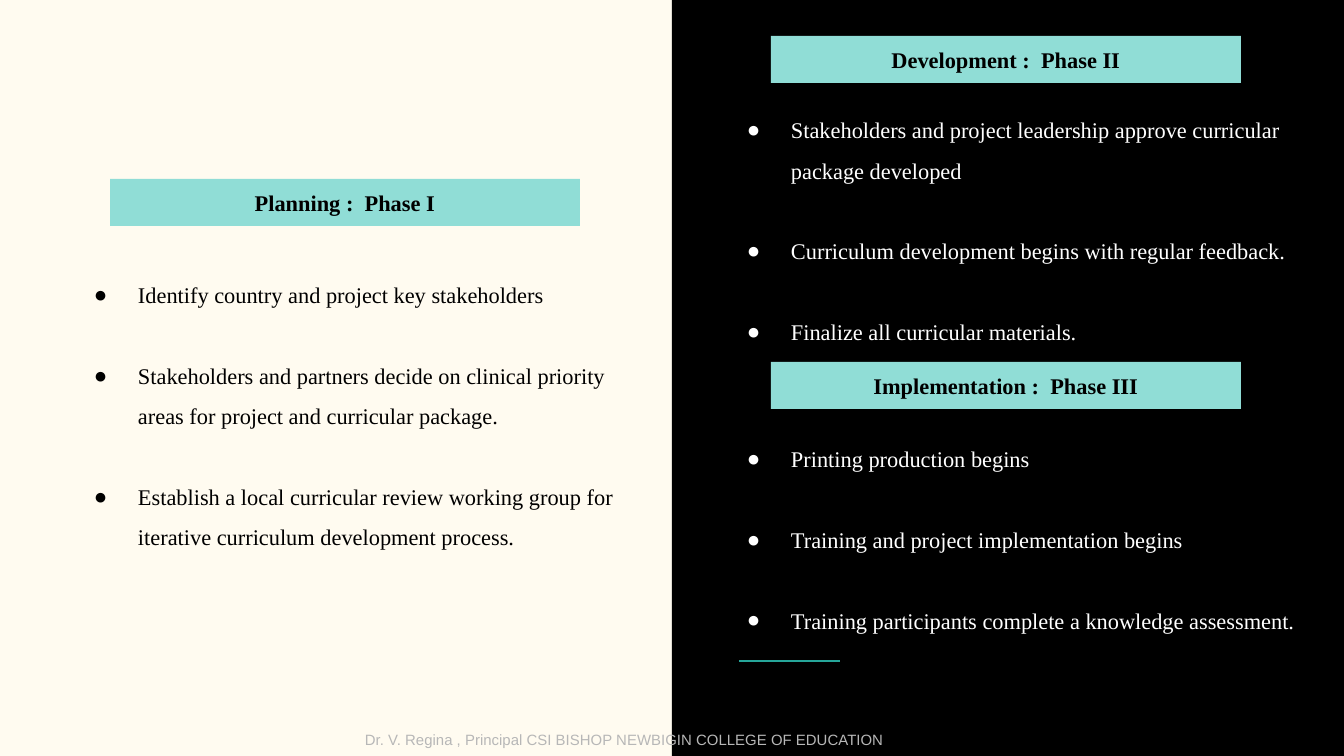
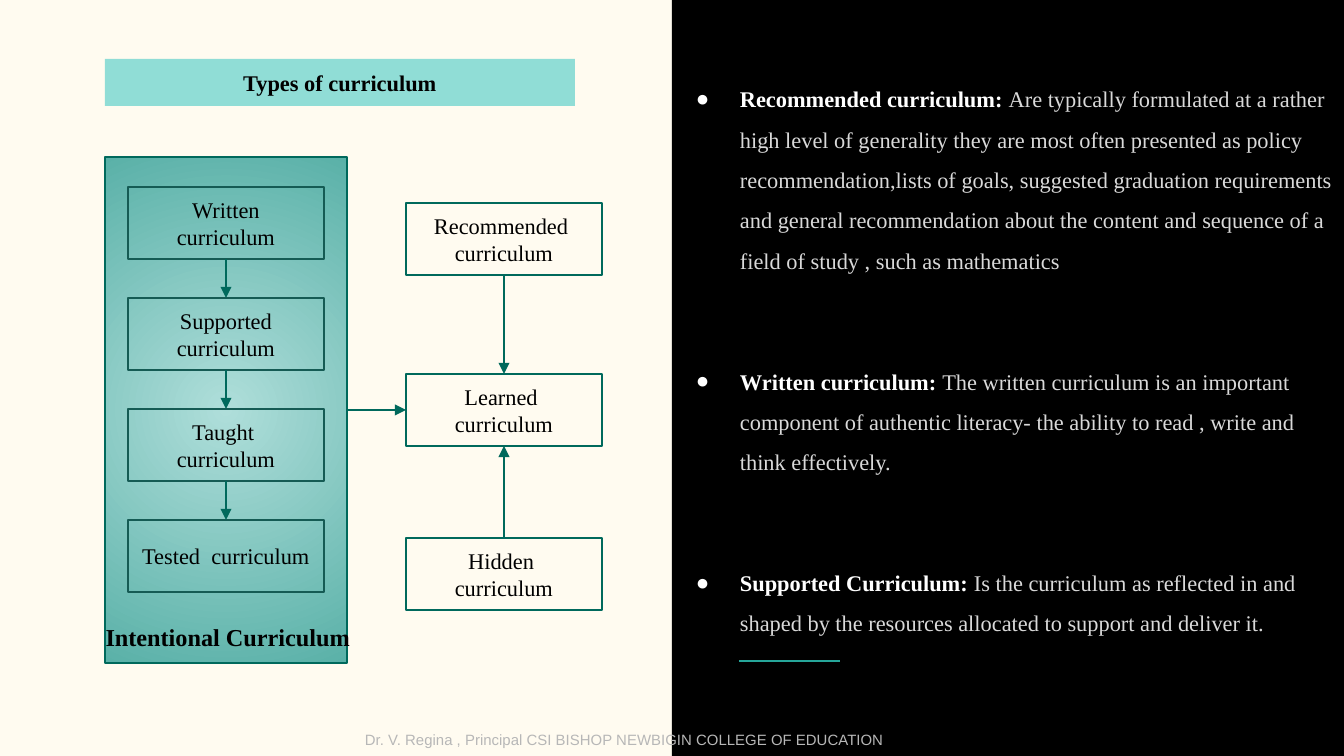
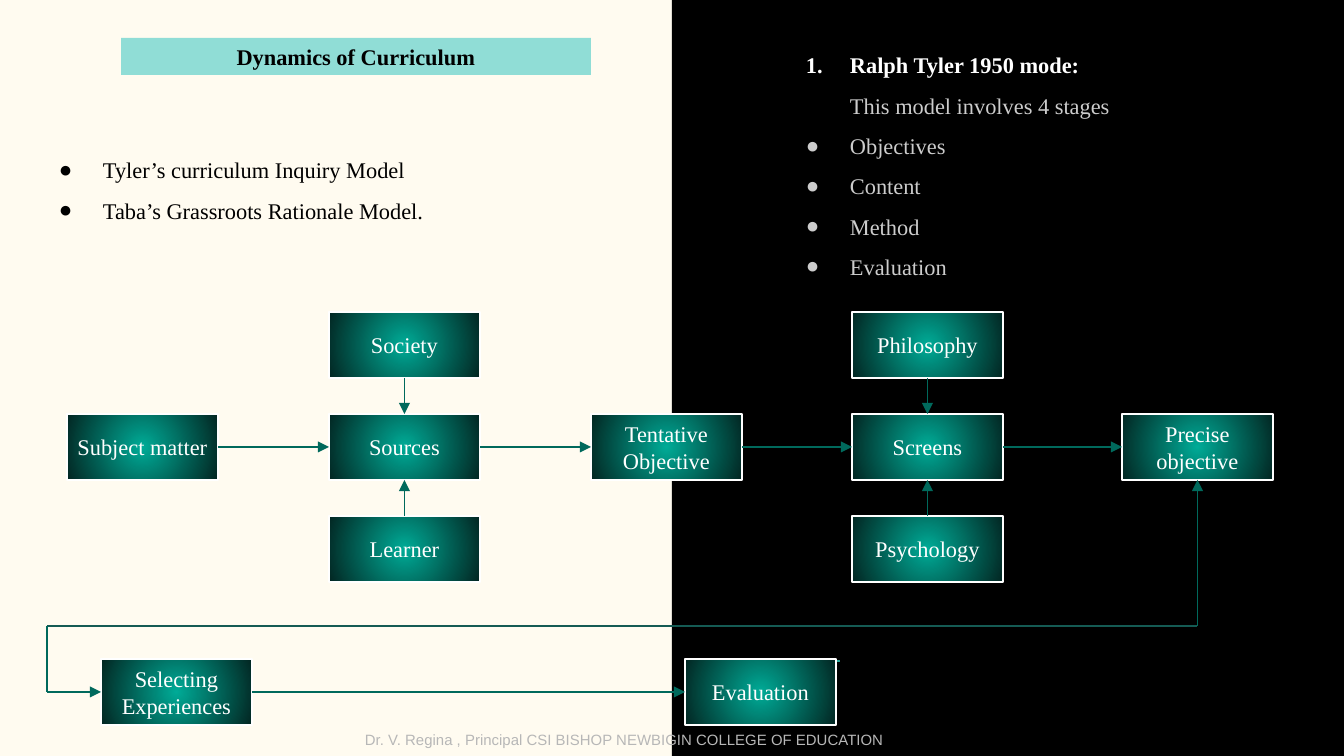
"""Build three curriculum slides with phase lists and flow diagrams."""
from dataclasses import dataclass
from typing import Optional

from lxml import etree
import pptx
import pptx.dml.color
import pptx.enum.shapes
import pptx.enum.text
import pptx.oxml.ns
import pptx.shapes.autoshape
import pptx.shapes.base
import pptx.shapes.connector
import pptx.slide
import pptx.text.text
import pptx.util

EMU_PER_PX = 914400 / 134.4
WIDTH, HEIGHT = 1344, 756
INSET = 13
LINE_PT = 21.6
SERIF, SANS = "Times New Roman", "Arial"
CREAM, BLACK, WHITE = "FFFBF0", "000000", "FFFFFF"
BAND, ACCENT, ARROW, OUTLINE = "90DDD6", "26A69A", "00695C", "155B54"
FOOTER_GRAY, LIGHT_GRAY, MID_GRAY = "B7B7B7", "D9D9D9", "CCCCCC"
PANEL_GLOW, NODE_GLOW = ("AFDEDA", "5AB1A8"), ("00AB97", "022622")
FOOTER = "Dr. V. Regina , Principal CSI BISHOP NEWBIGIN COLLEGE OF EDUCATION"
TOP, LEFT, BOTTOM, RIGHT = range(4)
RECTANGLE = pptx.enum.shapes.MSO_SHAPE.RECTANGLE
CENTER = pptx.enum.text.PP_ALIGN.CENTER
MIDDLE = pptx.enum.text.MSO_ANCHOR.MIDDLE


@dataclass(frozen=True)
class Rect:
    """A place on the slide in px."""
    left: int
    top: int
    width: int
    height: int


@dataclass(frozen=True)
class Span:
    """A piece of text with one look."""
    text: str
    color: str
    bold: bool = False


@dataclass(frozen=True)
class Item:
    """A list paragraph with its marker and the empty lines before it."""
    spans: tuple[Span, ...]
    marker: str = "●"
    gap: int = 0


@dataclass(frozen=True)
class Node:
    """A labelled box of a diagram."""
    label: str
    left: int
    top: int


@dataclass(frozen=True)
class Link:
    """An arrow between the sides of two named boxes."""
    start: str
    start_side: int
    end: str
    end_side: int


def px(length: float) -> pptx.util.Emu:
    """Turn px into EMU."""
    return pptx.util.Emu(round(length * EMU_PER_PX))


def rgb(color: str) -> pptx.dml.color.RGBColor:
    """Turn a hex string into a colour."""
    return pptx.dml.color.RGBColor.from_string(color)


def qn(tag: str) -> str:
    """Expand a prefixed tag name."""
    return pptx.oxml.ns.qn(tag)


def format_span(span: pptx.text.text._Run, color: str, bold: bool = False,
                size: int = 12, font: str = SERIF) -> None:
    """Give a run its font and colour."""
    span.font.name, span.font.size, span.font.bold = font, pptx.util.Pt(size), bold
    span.font.color.rgb = rgb(color)


def set_frame(shape: pptx.shapes.base.BaseShape, inset: int = INSET) -> None:
    """Set wrapping and margins of a text frame."""
    frame = shape.text_frame
    frame.word_wrap = True
    frame.auto_size = pptx.enum.text.MSO_AUTO_SIZE.NONE
    frame.margin_left = frame.margin_right = px(inset)
    frame.margin_top = frame.margin_bottom = px(inset)


def write_centered(shape: pptx.shapes.base.BaseShape, text: str, color: str,
                   bold: bool = False, size: int = 12, inset: int = INSET) -> None:
    """Write one centred paragraph into a shape."""
    set_frame(shape, inset)
    shape.text_frame.vertical_anchor = MIDDLE
    shape.text_frame.text = text
    para = shape.text_frame.paragraphs[0]
    para.alignment = CENTER
    format_span(para.runs[0], color, bold, size)


def add_rect(slide: pptx.slide.Slide, rect: Rect, fill: Optional[str] = None,
             line: Optional[str] = None, glow: Optional[tuple[str, str]] = None,
             ) -> pptx.shapes.autoshape.Shape:
    """Draw a rectangle with a plain, radial or no fill."""
    box = slide.shapes.add_shape(RECTANGLE, px(rect.left), px(rect.top),
                                 px(rect.width), px(rect.height))
    box.shadow.inherit = False
    if glow:
        box.fill.gradient()
        for stop, color in zip(box.fill.gradient_stops, glow):
            stop.color.rgb = rgb(color)
        gradient = box._element.spPr.find(qn("a:gradFill"))
        gradient.remove(gradient.find(qn("a:lin")))
        radial = etree.SubElement(gradient, qn("a:path"), {"path": "circle"})
        etree.SubElement(radial, qn("a:fillToRect"), dict.fromkeys("ltrb", "50000"))
    elif fill:
        box.fill.solid()
        box.fill.fore_color.rgb = rgb(fill)
    else:
        box.fill.background()
    if line:
        box.line.color.rgb = rgb(line)
        box.line.width = pptx.util.Pt(0.75)
    else:
        box.line.fill.background()
    return box


def add_line(slide: pptx.slide.Slide, start: tuple[float, float], end: tuple[float, float],
             color: str = ARROW, width: float = 0.75, arrow: bool = False,
             ) -> pptx.shapes.connector.Connector:
    """Draw a straight line, with an arrowhead at its end if wanted."""
    line = slide.shapes.add_connector(pptx.enum.shapes.MSO_CONNECTOR.STRAIGHT,
                                      px(start[0]), px(start[1]), px(end[0]), px(end[1]))
    line.line.color.rgb = rgb(color)
    line.line.width = pptx.util.Pt(width)
    properties = line._element.spPr
    if arrow:
        etree.SubElement(properties.find(qn("a:ln")), qn("a:tailEnd"), {"type": "triangle"})
    etree.SubElement(properties, qn("a:effectLst"))
    return line


def add_text_box(slide: pptx.slide.Slide, rect: Rect) -> pptx.shapes.autoshape.Shape:
    """Add an empty wrapping text box."""
    box = slide.shapes.add_textbox(px(rect.left), px(rect.top), px(rect.width), px(rect.height))
    set_frame(box)
    return box


def add_band(slide: pptx.slide.Slide, text: str, rect: Rect) -> None:
    """Add a heading band that is not the slide title."""
    write_centered(add_rect(slide, rect, BAND), text, BLACK, True)


def set_marker(para: pptx.text.text._Paragraph, marker: str, color: str) -> None:
    """Indent a paragraph and give it a bullet or a number."""
    properties = para._p.get_or_add_pPr()
    properties.set("marL", str(px(67)))
    properties.set("indent", str(px(-44) if marker else 0))
    if not marker:
        etree.SubElement(properties, qn("a:buNone"))
        return
    tint = etree.SubElement(properties, qn("a:buClr"))
    etree.SubElement(tint, qn("a:srgbClr"), {"val": color})
    etree.SubElement(properties, qn("a:buFont"), {"typeface": SERIF})
    if marker == "1.":
        etree.SubElement(properties, qn("a:buAutoNum"), {"type": "arabicPeriod"})
    else:
        etree.SubElement(properties, qn("a:buChar"), {"char": marker})


def add_list(slide: pptx.slide.Slide, rect: Rect, items: list[Item]) -> None:
    """Add a text box holding list items."""
    frame = add_text_box(slide, rect).text_frame
    for index, item in enumerate(items):
        para = frame.add_paragraph() if index else frame.paragraphs[0]
        para.line_spacing = 1.5
        para.space_before = pptx.util.Pt(LINE_PT * item.gap)
        set_marker(para, item.marker, item.spans[0].color)
        for part in item.spans:
            span = para.add_run()
            span.text = part.text
            format_span(span, part.color, part.bold)


def plain_items(texts: list[str], color: str, gap: int = 0) -> list[Item]:
    """Make single-colour items with equal gaps between them."""
    return [Item((Span(text, color),), gap=gap if index else 0)
            for index, text in enumerate(texts)]


def side_point(box: pptx.shapes.base.BaseShape, side: int) -> tuple[float, float]:
    """Return the middle of a box side in px."""
    across = {LEFT: 0, RIGHT: 1}.get(side, 0.5)
    down = {TOP: 0, BOTTOM: 1}.get(side, 0.5)
    return ((box.left + box.width * across) / EMU_PER_PX,
            (box.top + box.height * down) / EMU_PER_PX)


def add_links(slide: pptx.slide.Slide, boxes: dict[str, pptx.shapes.autoshape.Shape],
              links: list[Link]) -> None:
    """Join boxes with arrows."""
    for link in links:
        start, end = boxes[link.start], boxes[link.end]
        line = add_line(slide, side_point(start, link.start_side),
                        side_point(end, link.end_side), arrow=True)
        line.begin_connect(start, link.start_side)
        line.end_connect(end, link.end_side)


def start_slide(deck, title: str, rect: Rect) -> pptx.slide.Slide:
    """Add a slide with its split page, accent line and title band."""
    slide = deck.slides.add_slide(deck.slide_layouts[5])
    add_rect(slide, Rect(WIDTH // 2, 0, WIDTH // 2, HEIGHT), BLACK)
    add_line(slide, (739, 661), (840, 661), ACCENT, 1.5)
    band = slide.shapes.title
    band.left, band.top = px(rect.left), px(rect.top)
    band.width, band.height = px(rect.width), px(rect.height)
    band.fill.solid()
    band.fill.fore_color.rgb = rgb(BAND)
    write_centered(band, title, BLACK, True)
    return slide


def add_footer(slide: pptx.slide.Slide) -> None:
    """Add the footer line."""
    box = add_text_box(slide, Rect(352, 718, 732, 37))
    box.text_frame.text = FOOTER
    format_span(box.text_frame.paragraphs[0].runs[0], FOOTER_GRAY, size=8, font=SANS)


def build_phases(deck) -> None:
    """Build the slide of the three phases."""
    slide = start_slide(deck, "Planning :  Phase I", Rect(110, 179, 470, 47))
    add_list(slide, Rect(58, 255, 575, 301), plain_items([
        "Identify country and project key stakeholders",
        "Stakeholders and partners decide on clinical priority areas for project and "
        "curricular package.",
        "Establish a local curricular review working group for iterative curriculum "
        "development process."], BLACK, 1))
    add_band(slide, "Development :  Phase II", Rect(771, 36, 470, 47))
    add_list(slide, Rect(711, 90, 621, 301), plain_items([
        "Stakeholders and project leadership approve curricular package developed",
        "Curriculum development begins with regular feedback.",
        "Finalize all curricular materials."], WHITE, 1))
    add_band(slide, "Implementation :  Phase III", Rect(771, 362, 470, 47))
    add_list(slide, Rect(711, 419, 621, 321), plain_items([
        "Printing production begins",
        "Training and project implementation begins",
        "Training participants complete a knowledge assessment."], WHITE, 1))
    add_footer(slide)


def build_types(deck) -> None:
    """Build the slide of curriculum types."""
    slide = start_slide(deck, "Types of curriculum", Rect(105, 59, 470, 47))
    definitions = [
        ("Recommended curriculum: ",
         "Are typically formulated at a rather high level of generality they are most often "
         "presented as policy recommendation,lists of goals, suggested graduation requirements "
         "and general recommendation about the content and sequence of a field of study , "
         "such as mathematics"),
        ("Written curriculum: ",
         "The written curriculum is an important component of authentic literacy- the ability "
         "to read , write and think effectively."),
        ("Supported Curriculum: ",
         "Is the curriculum as reflected in and shaped by the resources allocated to support "
         "and deliver it."),
    ]
    add_list(slide, Rect(660, 59, 692, 676), [
        Item((Span(term, WHITE, True), Span(meaning, LIGHT_GRAY)), gap=2 if index else 0)
        for index, (term, meaning) in enumerate(definitions)])

    boxes = {"Panel": add_rect(slide, Rect(105, 157, 242, 506), line=ARROW, glow=PANEL_GLOW)}
    intentional = ["Written curriculum", "Supported curriculum",
                   "Taught  curriculum", "Tested  curriculum"]
    nodes = [Node(label, 128, 187 + 111 * row) for row, label in enumerate(intentional)]
    outcomes = [Node("Recommended  curriculum", 406, 203),
                Node("Learned  curriculum", 406, 374),
                Node("Hidden  curriculum", 406, 538)]
    for node in nodes + outcomes:
        outline = OUTLINE if node in nodes else ARROW
        box = add_rect(slide, Rect(node.left, node.top, 196, 72), line=outline)
        write_centered(box, node.label, BLACK)
        boxes[node.label] = box
    learned = outcomes[1].label
    links = [Link(above, BOTTOM, below, TOP)
             for above, below in zip(intentional, intentional[1:])]
    add_links(slide, boxes, links + [
        Link("Panel", RIGHT, learned, LEFT),
        Link(outcomes[0].label, BOTTOM, learned, TOP),
        Link(outcomes[2].label, TOP, learned, BOTTOM)])
    caption = add_text_box(slide, Rect(71, 617, 313, 39))
    write_centered(caption, "Intentional Curriculum", BLACK, True, 13)
    add_footer(slide)


def build_dynamics(deck) -> None:
    """Build the slide of the curriculum models."""
    slide = start_slide(deck, "Dynamics of Curriculum", Rect(121, 38, 470, 37))
    add_list(slide, Rect(23, 130, 668, 140), plain_items([
        "Tyler’s curriculum Inquiry Model", "Taba’s Grassroots Rationale Model."], BLACK))
    add_list(slide, Rect(770, 25, 554, 271), [
        Item((Span("Ralph Tyler 1950 mode:", WHITE, True),), "1."),
        Item((Span("This model involves 4 stages", MID_GRAY),), ""),
        *plain_items(["Objectives", "Content", "Method", "Evaluation"], MID_GRAY)])

    upper, middle, lower, last = 312, 414, 516, 659
    sources, screens = 329, 852
    nodes = [
        Node("Subject matter", 67, middle), Node("Sources", sources, middle),
        Node("Tentative Objective", 591, middle), Node("Screens", screens, middle),
        Node("Precise objective", 1122, middle),
        Node("Society", sources, upper), Node("Learner", sources, lower),
        Node("Philosophy", screens, upper), Node("Psychology", screens, lower),
        Node("Selecting Experiences", 101, last), Node("Evaluation", 685, last),
    ]
    boxes = {}
    for node in nodes:
        box = add_rect(slide, Rect(node.left, node.top, 151, 66), line=WHITE, glow=NODE_GLOW)
        write_centered(box, node.label, WHITE, inset=0)
        boxes[node.label] = box
    chain = [node.label for node in nodes[:5]]
    links = [Link(before, RIGHT, after, LEFT) for before, after in zip(chain, chain[1:])]
    add_links(slide, boxes, links + [
        Link("Society", BOTTOM, "Sources", TOP),
        Link("Learner", TOP, "Sources", BOTTOM),
        Link("Philosophy", BOTTOM, "Screens", TOP),
        Link("Psychology", TOP, "Screens", BOTTOM),
        Link("Selecting Experiences", RIGHT, "Evaluation", LEFT)])

    return_left, return_top = 47, 626
    objective, selecting = boxes["Precise objective"], boxes["Selecting Experiences"]
    objective_foot = side_point(objective, BOTTOM)
    selecting_edge = side_point(selecting, LEFT)
    corner = (return_left, return_top)
    turn = (objective_foot[0], return_top)
    drop = (return_left, selecting_edge[1])
    add_line(slide, corner, turn, OUTLINE)
    add_line(slide, corner, drop)
    rise = add_line(slide, turn, objective_foot, arrow=True)
    rise.end_connect(objective, BOTTOM)
    entry = add_line(slide, drop, selecting_edge, arrow=True)
    entry.end_connect(selecting, LEFT)
    add_footer(slide)


def main() -> None:
    """Build and save the deck."""
    deck = pptx.Presentation()
    deck.slide_width, deck.slide_height = px(WIDTH), px(HEIGHT)
    page_fill = deck.slide_master.background.fill
    page_fill.solid()
    page_fill.fore_color.rgb = rgb(CREAM)
    build_phases(deck)
    build_types(deck)
    build_dynamics(deck)
    deck.save("out.pptx")


if __name__ == "__main__":
    main()
